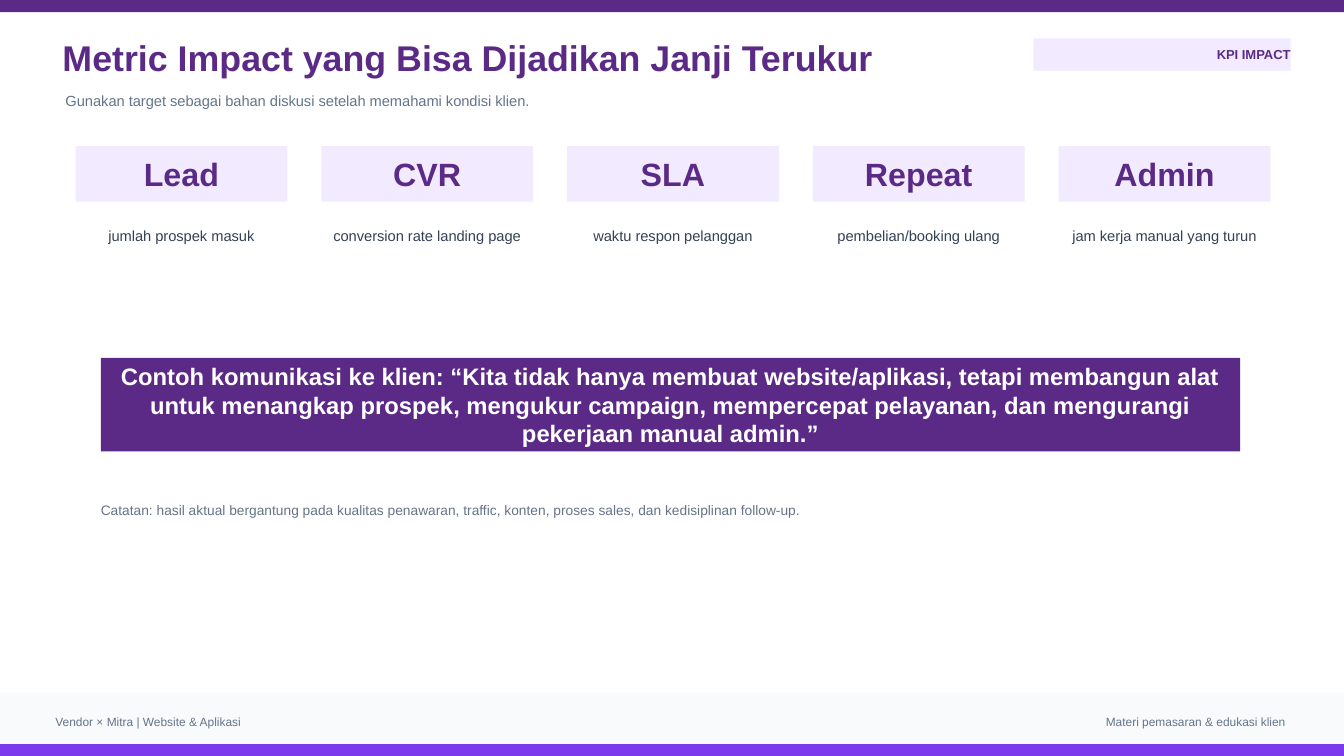
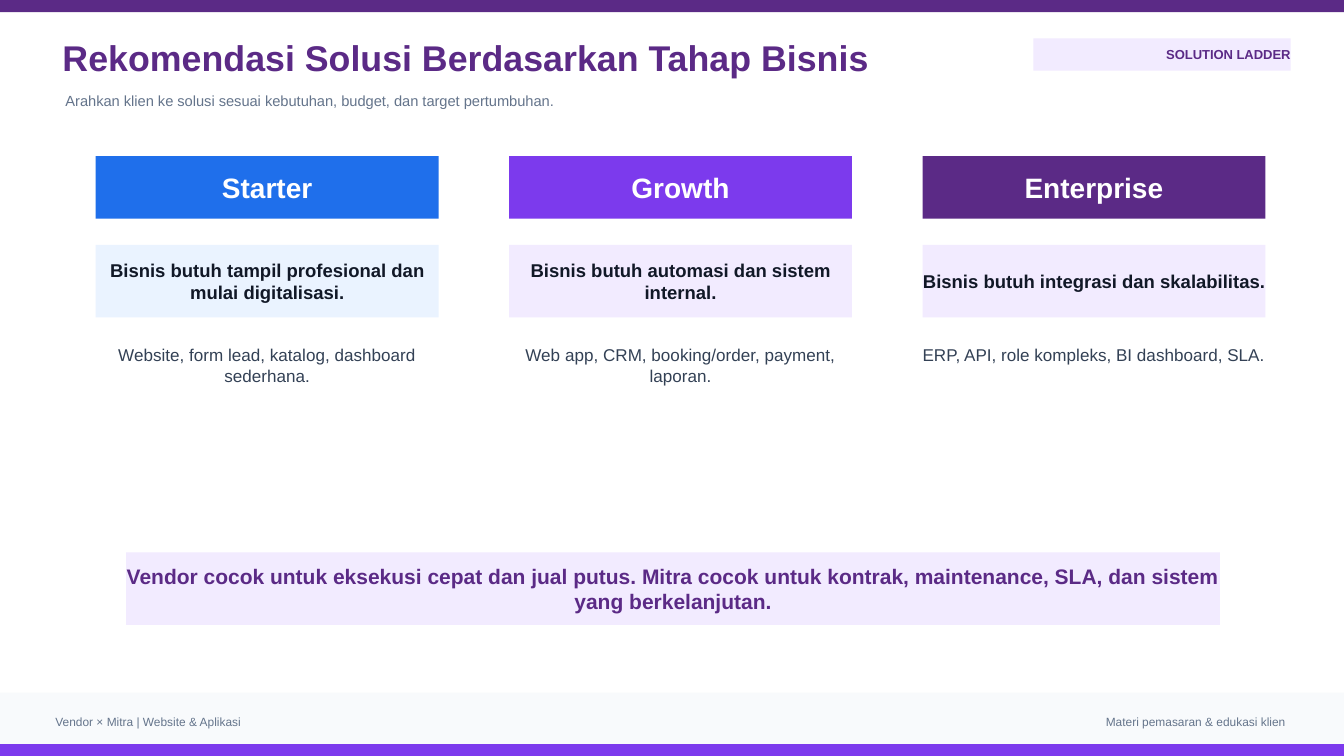
from typing import NamedTuple, Optional

from pptx import Presentation
from pptx.dml.color import RGBColor
from pptx.enum import shapes, text
from pptx.slide import Slide
from pptx.util import Inches, Pt

FONT = "Arial"
WHITE = RGBColor(0xFF, 0xFF, 0xFF)
INK = RGBColor(0x11, 0x18, 0x27)
BODY = RGBColor(0x33, 0x41, 0x55)
MUTED = RGBColor(0x64, 0x74, 0x8B)
MIST = RGBColor(0xF8, 0xFA, 0xFC)
PURPLE = RGBColor(0x5B, 0x2A, 0x86)
VIOLET = RGBColor(0x7C, 0x3A, 0xED)
LILAC = RGBColor(0xF2, 0xEB, 0xFF)
BLUE = RGBColor(0x1F, 0x6F, 0xEB)
SKY = RGBColor(0xEA, 0xF3, 0xFF)

LEFT, CENTER, RIGHT = text.PP_ALIGN.LEFT, text.PP_ALIGN.CENTER, text.PP_ALIGN.RIGHT
TOP, MIDDLE = text.MSO_ANCHOR.TOP, text.MSO_ANCHOR.MIDDLE

SLIDE_W, SLIDE_H = 13.33, 7.5
BAND_H = 0.12
FOOTER_H = 0.51


class Box(NamedTuple):
    """Left, top, width and height in inches."""
    x: float
    y: float
    w: float
    h: float


class Metric(NamedTuple):
    name: str
    meaning: str


class Tier(NamedTuple):
    name: str
    need: str
    solution: str
    color: RGBColor
    tint: RGBColor


METRICS = [
    Metric("Lead", "jumlah prospek masuk"),
    Metric("CVR", "conversion rate landing page"),
    Metric("SLA", "waktu respon pelanggan"),
    Metric("Repeat", "pembelian/booking ulang"),
    Metric("Admin", "jam kerja manual yang turun"),
]

TIERS = [
    Tier("Starter", "Bisnis butuh tampil profesional dan mulai digitalisasi.",
         "Website, form lead, katalog, dashboard sederhana.", BLUE, SKY),
    Tier("Growth", "Bisnis butuh automasi dan sistem internal.",
         "Web app, CRM, booking/order, payment, laporan.", VIOLET, LILAC),
    Tier("Enterprise", "Bisnis butuh integrasi dan skalabilitas.",
         "ERP, API, role kompleks, BI dashboard, SLA.", PURPLE, LILAC),
]


def add_text(s: Slide, box: Box, content: str = "", *, size: float = 10.5,
             color: RGBColor = MUTED, bold: bool = False,
             align: text.PP_ALIGN = LEFT, anchor: text.MSO_ANCHOR = MIDDLE,
             fill: Optional[RGBColor] = None) -> None:
    """Add a text box, or a filled rectangle when fill is given."""
    at = [Inches(v) for v in box]
    if fill is None:
        sp = s.shapes.add_textbox(*at)
    else:
        sp = s.shapes.add_shape(shapes.MSO_SHAPE.RECTANGLE, *at)
        sp.shadow.inherit = False
        sp.fill.solid()
        sp.fill.fore_color.rgb = fill
        sp.line.fill.background()
    if not content:
        return
    tf = sp.text_frame
    tf.word_wrap = True
    tf.vertical_anchor = anchor
    tf.margin_left = tf.margin_top = tf.margin_right = tf.margin_bottom = 0
    p = tf.paragraphs[0]
    p.alignment = align
    r = p.add_run()
    r.text = content
    r.font.name = FONT
    r.font.size = Pt(size)
    r.font.bold = bold
    r.font.color.rgb = color


def add_base_slide(prs: Presentation, title: str, subtitle: str, tag: str) -> Slide:
    """Add a slide with the shared bands, footer and heading."""
    s = prs.slides.add_slide(prs.slide_layouts[6])
    band_y = SLIDE_H - BAND_H
    add_text(s, Box(0, 0, SLIDE_W, BAND_H), fill=PURPLE)
    add_text(s, Box(0, band_y, SLIDE_W, BAND_H), fill=VIOLET)
    add_text(s, Box(0, band_y - FOOTER_H, SLIDE_W, FOOTER_H), fill=MIST)
    add_text(s, Box(0.55, 7.07, 5.6, 0.18), "Vendor × Mitra | Website & Aplikasi", size=8.5)
    add_text(s, Box(8.45, 7.07, 4.3, 0.18), "Materi pemasaran & edukasi klien",
             size=8.5, align=RIGHT)
    add_text(s, Box(0.62, 0.36, 9.4, 0.42), title, size=25.5, color=PURPLE, bold=True)
    add_text(s, Box(0.65, 0.86, 10.2, 0.28), subtitle)
    add_text(s, Box(10.25, 0.38, 2.55, 0.32), tag, size=9.3, color=PURPLE,
             bold=True, align=RIGHT, fill=LILAC)
    return s


def build_metrics(prs: Presentation) -> None:
    s = add_base_slide(prs, "Metric Impact yang Bisa Dijadikan Janji Terukur",
                       "Gunakan target sebagai bahan diskusi setelah memahami kondisi klien.",
                       "KPI IMPACT")
    first, last, width = 0.75, 10.5, 2.1
    pitch = (last - first) / (len(METRICS) - 1)
    for i, metric in enumerate(METRICS):
        x = first + i * pitch
        add_text(s, Box(x, 1.45, width, 0.55), metric.name, size=23, color=PURPLE,
                 bold=True, align=CENTER, fill=LILAC)
        add_text(s, Box(x, 2.11, width, 0.46), metric.meaning, color=BODY, align=CENTER)
    add_text(s, Box(1, 3.55, 11.3, 0.93),
             "Contoh komunikasi ke klien: “Kita tidak hanya membuat website/aplikasi, "
             "tetapi membangun alat untuk menangkap prospek, mengukur campaign, "
             "mempercepat pelayanan, dan mengurangi pekerjaan manual admin.”",
             size=17, color=WHITE, bold=True, align=CENTER, fill=PURPLE)
    add_text(s, Box(1, 4.9, 11, 0.32),
             "Catatan: hasil aktual bergantung pada kualitas penawaran, traffic, konten, "
             "proses sales, dan kedisiplinan follow-up.", size=9.8)


def build_tiers(prs: Presentation) -> None:
    s = add_base_slide(prs, "Rekomendasi Solusi Berdasarkan Tahap Bisnis",
                       "Arahkan klien ke solusi sesuai kebutuhan, budget, dan target pertumbuhan.",
                       "SOLUTION LADDER")
    first, width, gap = 0.95, 3.4, 0.7
    for i, tier in enumerate(TIERS):
        x = first + i * (width + gap)
        add_text(s, Box(x, 1.55, width, 0.62), tier.name, size=20, color=WHITE,
                 bold=True, align=CENTER, fill=tier.color)
        add_text(s, Box(x, 2.43, width, 0.72), tier.need, size=13.2, color=INK,
                 bold=True, align=CENTER, fill=tier.tint)
        add_text(s, Box(x, 3.42, width, 1.08), tier.solution, size=12.2, color=BODY,
                 align=CENTER, anchor=TOP)
    add_text(s, Box(1.25, 5.48, 10.85, 0.72),
             "Vendor cocok untuk eksekusi cepat dan jual putus. Mitra cocok untuk kontrak, "
             "maintenance, SLA, dan sistem yang berkelanjutan.",
             size=15, color=PURPLE, bold=True, align=CENTER, fill=LILAC)


def main() -> None:
    prs = Presentation()
    prs.slide_width, prs.slide_height = Inches(SLIDE_W), Inches(SLIDE_H)
    build_metrics(prs)
    build_tiers(prs)
    prs.save("out.pptx")


if __name__ == "__main__":
    main()
